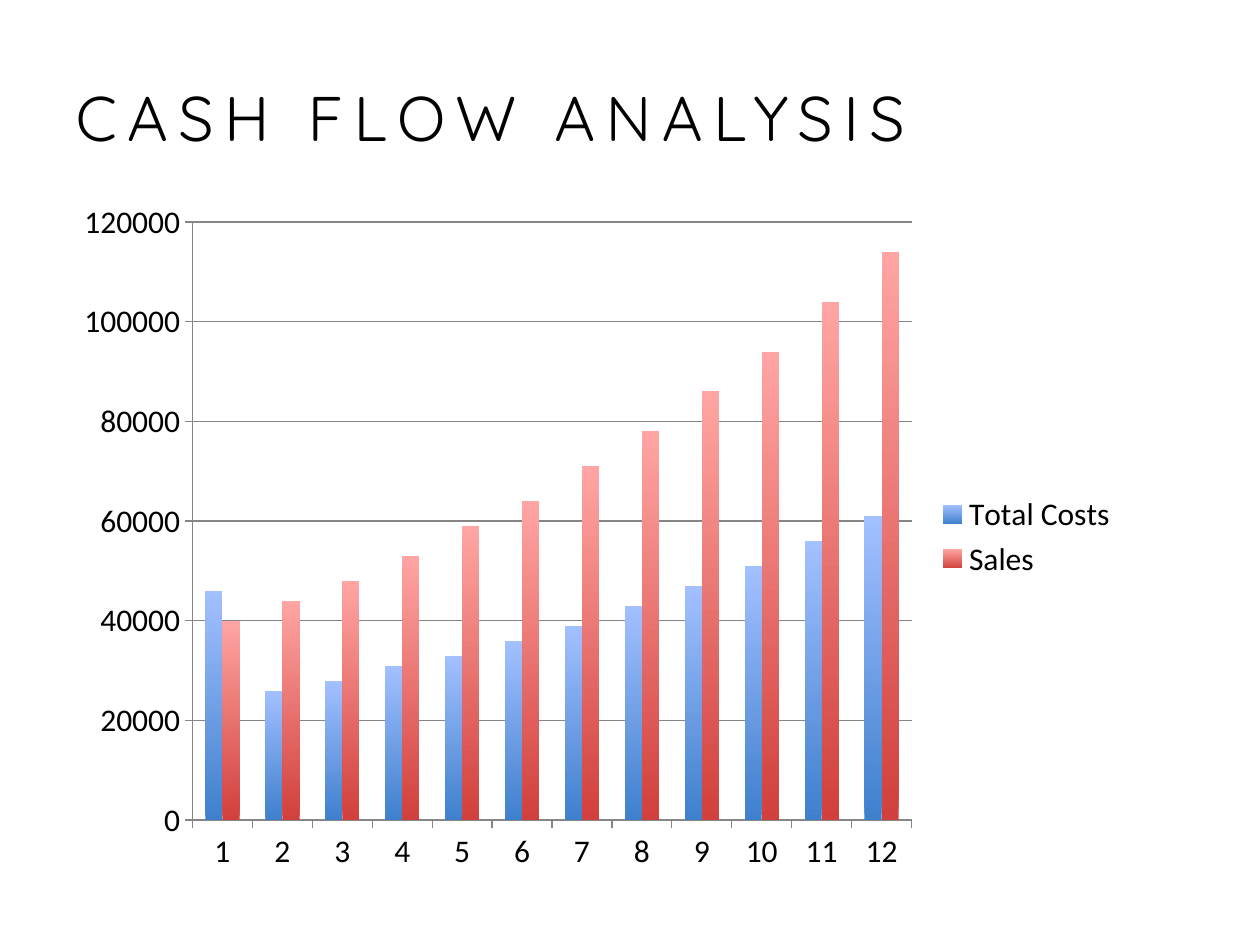
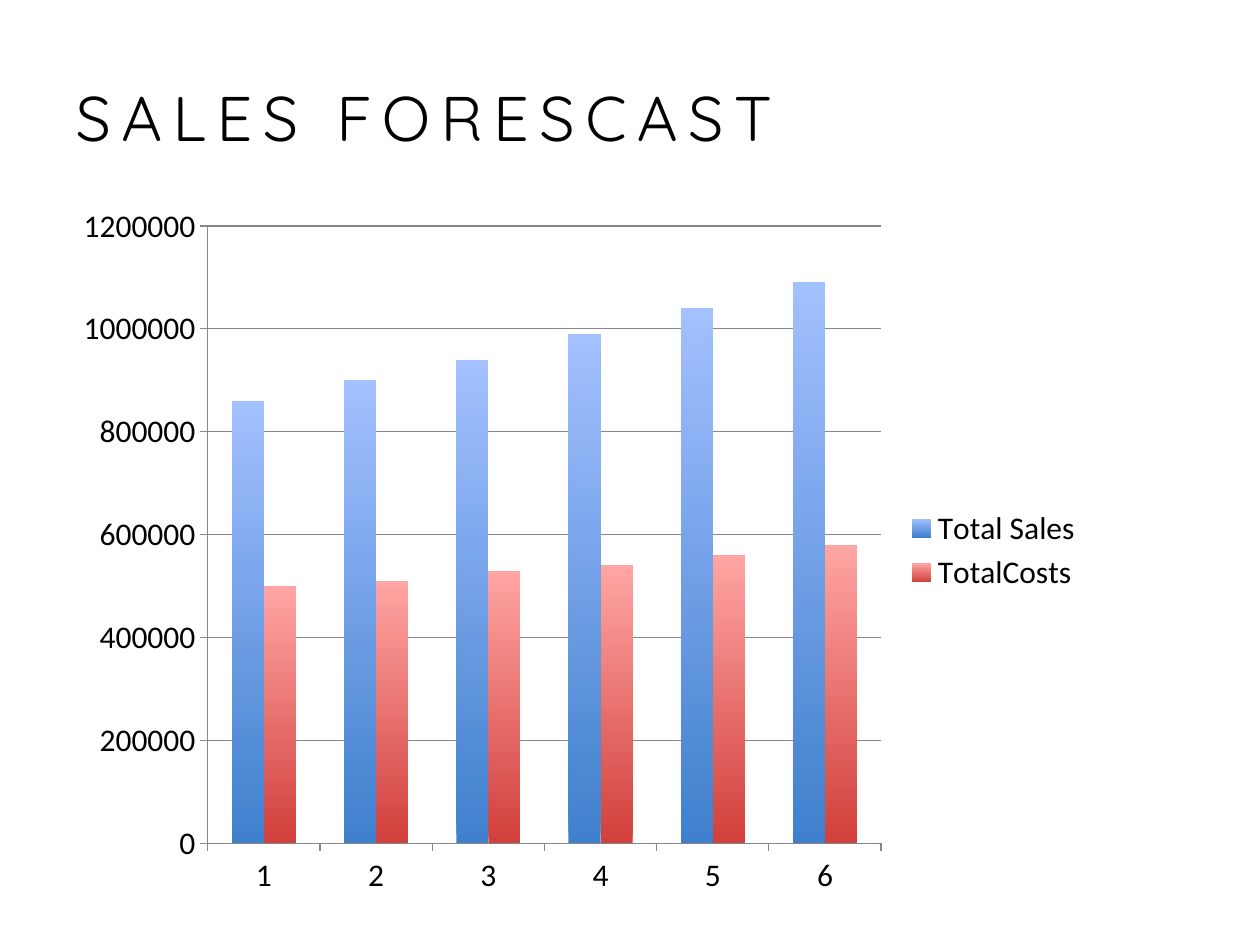
from pptx import Presentation
from pptx.chart.data import CategoryChartData
from pptx.dml.color import RGBColor
from pptx.enum.chart import XL_CHART_TYPE, XL_LEGEND_POSITION, XL_TICK_MARK
from pptx.enum.text import MSO_ANCHOR, MSO_AUTO_SIZE, PP_ALIGN
from pptx.util import Pt

SLIDES = [
    {
        "title": "CASH FLOW ANALYSIS",
        "box": (36, 108, 610, 397.5),
        "series": {
            "Total Costs": (46000, 26000, 28000, 31000, 33000, 36000,
                            39000, 43000, 47000, 51000, 56000, 61000),
            "Sales": (40000, 44000, 48000, 53000, 59000, 64000,
                      71000, 78000, 86000, 94000, 104000, 114000),
        },
        "top": 120000,
        "step": 20000,
    },
    {
        "title": "SALES FORESCAST",
        "box": (36, 110, 590, 409),
        "series": {
            "Total Sales": (860000, 900000, 940000, 990000, 1040000, 1090000),
            "TotalCosts": (500000, 510000, 530000, 540000, 560000, 580000),
        },
        "top": 1200000,
        "step": 200000,
    },
]

BLACK = RGBColor(0x00, 0x00, 0x00)
GREY = RGBColor(0x86, 0x86, 0x86)
# Bottom and top colour of each series' bars
SHADES = [
    (RGBColor(0x3F, 0x80, 0xCD), RGBColor(0xA3, 0xC0, 0xFF)),
    (RGBColor(0xD1, 0x40, 0x3C), RGBColor(0xFF, 0xA5, 0xA3)),
]
TITLE_BOX = (36, 41, 648, 51)
TITLE_FONT, CHART_FONT = "Quicksand", "Calibri"
SPACING = 6

COLUMNS = XL_CHART_TYPE.COLUMN_CLUSTERED
RIGHT = XL_LEGEND_POSITION.RIGHT
OUTSIDE = XL_TICK_MARK.OUTSIDE
MIDDLE = MSO_ANCHOR.MIDDLE
GROW = MSO_AUTO_SIZE.SHAPE_TO_FIT_TEXT
LEFT = PP_ALIGN.LEFT


def set_font(font, name, size):
    font.name = name
    font.size = Pt(size)
    font.bold = False
    font.color.rgb = BLACK


def set_line(line):
    line.color.rgb = GREY
    line.width = Pt(0.75)


def set_title(slide, text):
    shape = slide.shapes.title
    shape.left, shape.top, shape.width, shape.height = map(Pt, TITLE_BOX)
    frame = shape.text_frame
    frame.vertical_anchor = MIDDLE
    frame.auto_size = GROW
    para = frame.paragraphs[0]
    para.alignment = LEFT
    run = para.add_run()
    run.text = text
    set_font(run.font, TITLE_FONT, 36)
    run._r.get_or_add_rPr().set("spc", str(SPACING * 100))


def shade(fill, colors):
    """Blend the colours from the bottom of the bar to its top."""
    fill.gradient()
    fill.gradient_angle = 90
    for stop, color in zip(fill.gradient_stops, colors):
        stop.color.rgb = color


def add_columns(slide, item):
    series = item["series"]
    data = CategoryChartData(number_format="General")
    count = len(next(iter(series.values())))
    data.categories = [str(n + 1) for n in range(count)]
    for name, values in series.items():
        data.add_series(name, values)
    chart = slide.shapes.add_chart(COLUMNS, *map(Pt, item["box"]), data).chart

    set_font(chart.font, CHART_FONT, 18)
    chart.has_title = False
    chart.has_legend = True
    chart.legend.position = RIGHT
    chart.legend.include_in_layout = False

    for axis in (chart.category_axis, chart.value_axis):
        axis.major_tick_mark = OUTSIDE
        set_line(axis.format.line)
    scale = chart.value_axis
    scale.minimum_scale = 0
    scale.maximum_scale = item["top"]
    scale.major_unit = item["step"]
    set_line(scale.major_gridlines.format.line)

    plot = chart.plots[0]
    plot.vary_by_categories = False
    plot.gap_width = 150
    plot.overlap = 0
    for bars, colors in zip(plot.series, SHADES):
        bars.invert_if_negative = False
        shade(bars.format.fill, colors)


def main():
    deck = Presentation()
    deck.slide_width, deck.slide_height = Pt(720), Pt(540)
    layout = deck.slide_layouts.get_by_name("Title Only")
    for item in SLIDES:
        slide = deck.slides.add_slide(layout)
        set_title(slide, item["title"])
        add_columns(slide, item)
    deck.save("out.pptx")


if __name__ == "__main__":
    main()
